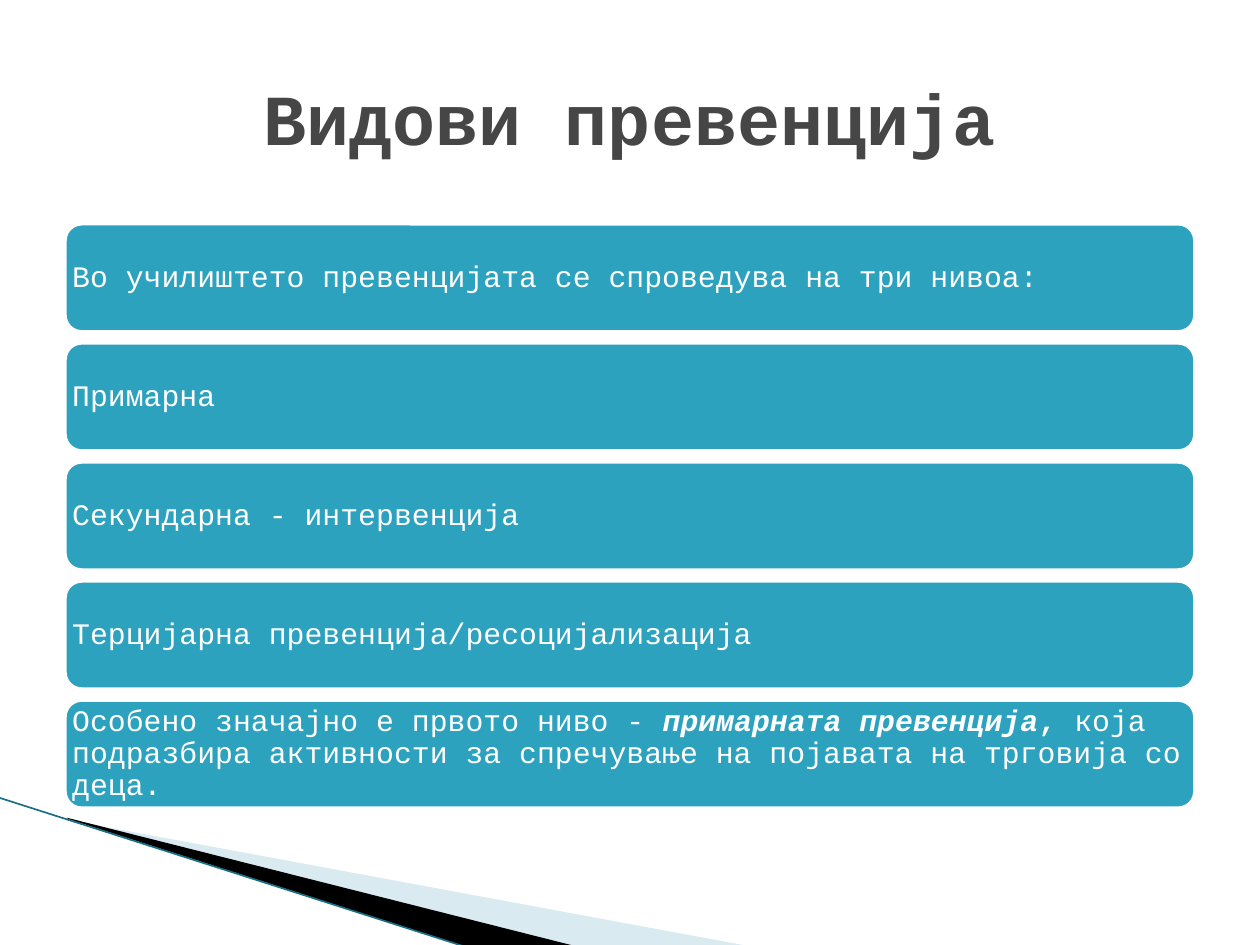
from lxml import etree
from pptx import Presentation
from pptx.dml.color import RGBColor
from pptx.enum.shapes import MSO_CONNECTOR, MSO_SHAPE
from pptx.enum.text import MSO_ANCHOR, PP_ALIGN
from pptx.oxml.ns import qn
from pptx.util import Inches, Pt

ROUNDED = MSO_SHAPE.ROUNDED_RECTANGLE
STRAIGHT = MSO_CONNECTOR.STRAIGHT
MIDDLE = MSO_ANCHOR.MIDDLE
LEFT = PP_ALIGN.LEFT
CENTER = PP_ALIGN.CENTER

FONT = "Courier New"
WHITE = "FFFFFF"
TEAL = "2DA2BF"
PALE_TEAL = "A0CBDC"
DARK_TEAL = "1B6F85"
BLACK = "000000"
GRAY = "464646"

LEVELS = [
    [("Во училиштето превенцијата се спроведува на три нивоа:", False, False)],
    [("Примарна", False, False)],
    [("Секундарна - интервенција", False, False)],
    [("Терцијарна превенција/ресоцијализација", False, False)],
    [
        ("Особено значајно е првото ниво - ", False, False),
        ("примарната превенција", True, True),
        (", ", True, False),
        ("која подразбира активности за спречување на појавата "
         "на трговија со деца.", False, False),
    ],
]


def rgb(value):
    return RGBColor.from_string(value)


def style_font(font, size, color, bold=False, italic=False):
    font.name = FONT
    font.size = Pt(size)
    font.color.rgb = rgb(color)
    font.bold = bold
    font.italic = italic


def set_title(slide, text):
    title = slide.shapes.title
    title.left, title.top = Inches(0.5), Inches(0.3)
    title.width, title.height = Inches(9), Inches(1.25)
    frame = title.text_frame
    frame.text = text
    frame.vertical_anchor = MIDDLE
    heading = frame.paragraphs[0]
    heading.alignment = CENTER
    style_font(heading.runs[0].font, 41, GRAY, bold=True)


def add_wedge(slide, points, color, opacity=100):
    corners = [(Inches(x), Inches(y)) for x, y in points]
    builder = slide.shapes.build_freeform(*corners[0])
    builder.add_line_segments(corners[1:], close=True)
    wedge = builder.convert_to_shape()
    wedge.shadow.inherit = False
    wedge.fill.solid()
    wedge.fill.fore_color.rgb = rgb(color)
    wedge.line.fill.background()
    if opacity < 100:
        tint = wedge._element.spPr.find(qn("a:solidFill"))[0]
        etree.SubElement(tint, qn("a:alpha"), val=str(opacity * 1000))


def add_edge(slide, start, end, color, width):
    edge = slide.shapes.add_connector(
        STRAIGHT, *(Inches(value) for value in start + end))
    edge.line.color.rgb = rgb(color)
    edge.line.width = Pt(width)
    etree.SubElement(edge._element.spPr, qn("a:effectLst"))


def add_level(slide, top, pieces):
    bar = slide.shapes.add_shape(
        ROUNDED, Inches(0.5), Inches(top), Inches(9), Inches(0.89))
    bar.shadow.inherit = False
    bar.fill.solid()
    bar.fill.fore_color.rgb = rgb(TEAL)
    bar.line.color.rgb = rgb(WHITE)
    bar.line.width = Pt(4.33)

    frame = bar.text_frame
    frame.word_wrap = True
    frame.vertical_anchor = MIDDLE
    frame.margin_left = frame.margin_right = Inches(0.03)
    frame.margin_top = frame.margin_bottom = Inches(0.03)
    paragraph = frame.paragraphs[0]
    paragraph.alignment = LEFT
    paragraph.line_spacing = 0.9
    for text, bold, italic in pieces:
        run = paragraph.add_run()
        run.text = text
        style_font(run.font, 17, WHITE, bold, italic)


def main():
    deck = Presentation()
    deck.slide_width, deck.slide_height = Inches(10), Inches(7.5)
    slide = deck.slides.add_slide(deck.slide_layouts[5])

    add_wedge(slide, [(0.55, 6.51), (5.95, 7.51), (4.56, 7.51), (0.55, 6.5)],
              PALE_TEAL, opacity=40)
    add_wedge(slide, [(0.53, 6.49), (4.57, 7.51), (3.72, 7.52), (0.54, 6.5)],
              BLACK)
    add_edge(slide, (-0.01, 6.33), (3.71, 7.52), DARK_TEAL, 0.95)

    for index, pieces in enumerate(LEVELS):
        add_level(slide, 1.76 + index * 0.945, pieces)
    set_title(slide, "Видови превенција")

    deck.save("out.pptx")


if __name__ == "__main__":
    main()
